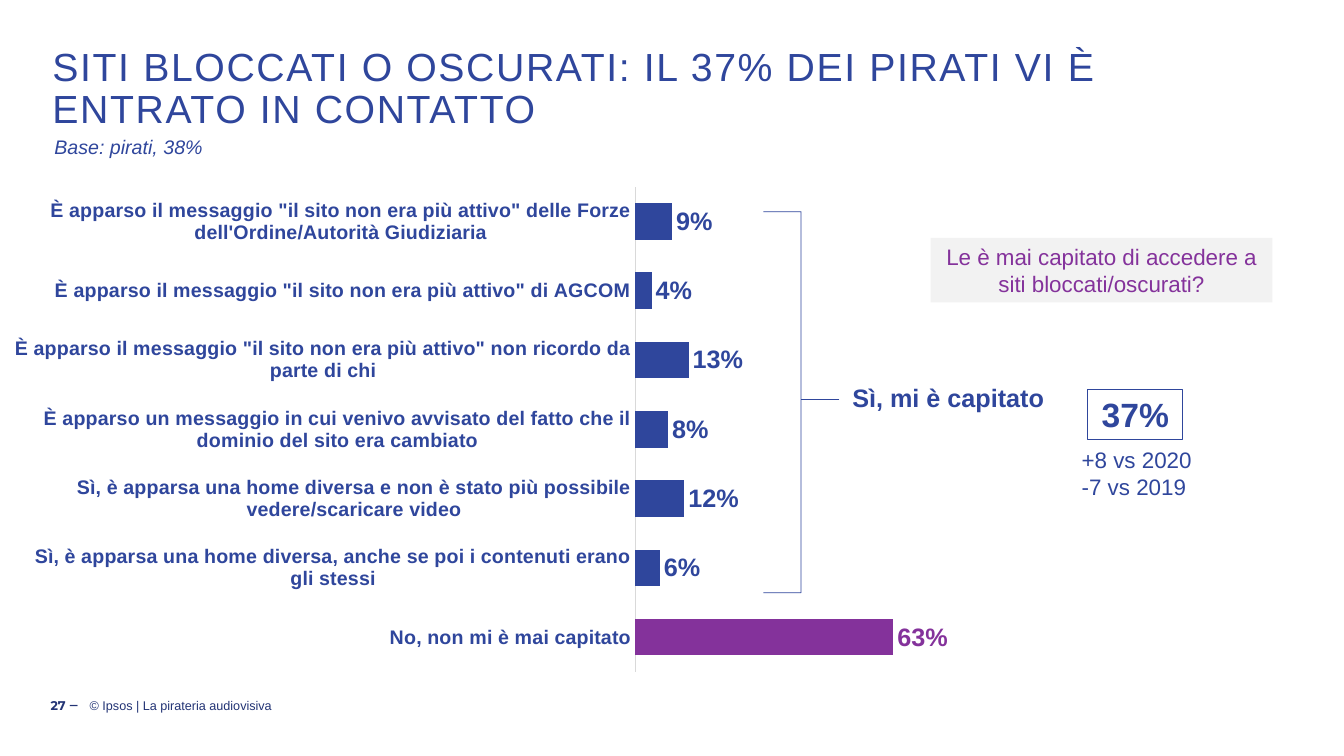
import lxml.etree
import pptx
import pptx.chart.data
import pptx.dml.color
import pptx.enum.chart
import pptx.enum.shapes
import pptx.enum.text
import pptx.oxml
import pptx.oxml.ns
import pptx.util

PX = 9144  # 100 px to the inch
BLUE = pptx.dml.color.RGBColor(0x2F, 0x46, 0x9C)
NAVY = pptx.dml.color.RGBColor(0x23, 0x34, 0x75)
PURPLE = pptx.dml.color.RGBColor(0x84, 0x32, 0x9B)
PALE = pptx.dml.color.RGBColor(0xF2, 0xF2, 0xF2)
GREY = pptx.dml.color.RGBColor(0xD9, 0xD9, 0xD9)

ALIGN = pptx.enum.text.PP_ALIGN
ANCHOR = pptx.enum.text.MSO_ANCHOR
SHAPE = pptx.enum.shapes.MSO_SHAPE

ANSWERS = [
    ("È apparso il messaggio \"il sito non era più attivo\" delle Forze dell'Ordine/Autorità Giudiziaria", 0.09),
    ("È apparso il messaggio \"il sito non era più attivo\" di AGCOM", 0.04),
    ("È apparso il messaggio \"il sito non era più attivo\" non ricordo da parte di chi", 0.13),
    ("È apparso un messaggio in cui venivo avvisato del fatto che il dominio del sito era cambiato", 0.08),
    ("Sì, è apparsa una home diversa e non è stato più possibile vedere/scaricare video", 0.12),
    ("Sì, è apparsa una home diversa, anche se poi i contenuti erano gli stessi", 0.06),
    ("No, non mi è mai capitato", 0.63),
]
PLOT_AREA = {"x": 0.594, "y": 0.03, "w": 0.391, "h": 0.94}


def px(*lengths):
    return [pptx.util.Emu(length * PX) for length in lengths]


def style_font(font, size, color, bold=False, italic=False, name="Arial"):
    font.name, font.size = name, pptx.util.Pt(size)
    font.bold, font.italic = bold, italic
    font.color.rgb = color


def fill_text(shape, text, size, color, align=ALIGN.LEFT, anchor=ANCHOR.TOP, inset=10, **style):
    frame = shape.text_frame
    frame.text = text
    frame.word_wrap = True
    frame.vertical_anchor = anchor
    frame.margin_left, frame.margin_right = px(inset, inset)
    frame.margin_top, frame.margin_bottom = px(5, 5)
    for para in frame.paragraphs:
        para.alignment = align
        for span in para.runs:
            style_font(span.font, size, color, **style)


def add_text(page, bounds, text, size, color, **style):
    box = page.shapes.add_textbox(*px(*bounds))
    fill_text(box, text, size, color, **style)


def add_shape(page, kind, bounds, fill=None, line=None, width=0.75):
    shape = page.shapes.add_shape(kind, *px(*bounds))
    shape.shadow.inherit = False
    if fill is None:
        shape.fill.background()
    else:
        shape.fill.solid()
        shape.fill.fore_color.rgb = fill
    if line is None:
        shape.line.fill.background()
    else:
        shape.line.color.rgb = line
        shape.line.width = pptx.util.Pt(width)
    return shape


def set_title(page, text):
    title = page.shapes.title
    title.left, title.top, title.width, title.height = px(44, 42, 1245, 95)
    fill_text(title, text, 28, BLUE, inset=8)
    para = title.text_frame.paragraphs[0]
    para.line_spacing = 0.9
    para.runs[0].font._element.set("spc", "120")


def place_plot(chart):
    """Fix the inner plot area as fractions of the chart."""
    plot_area = chart._chartSpace.chart.plotArea
    for old in plot_area.findall(pptx.oxml.ns.qn("c:layout")):
        plot_area.remove(old)
    layout = lxml.etree.Element(pptx.oxml.ns.qn("c:layout"))
    manual = lxml.etree.SubElement(layout, pptx.oxml.ns.qn("c:manualLayout"))
    settings = [("layoutTarget", "inner"), ("xMode", "edge"), ("yMode", "edge"), *PLOT_AREA.items()]
    for tag, value in settings:
        lxml.etree.SubElement(manual, pptx.oxml.ns.qn("c:" + tag)).set("val", str(value))
    plot_area.insert(0, layout)


def format_axes(chart):
    tick = pptx.enum.chart.XL_TICK_MARK
    categories = chart.category_axis
    categories.reverse_order = True
    categories.major_tick_mark = categories.minor_tick_mark = tick.NONE
    categories.format.line.color.rgb = GREY
    categories.format.line.width = pptx.util.Pt(0.75)
    style_font(categories.tick_labels.font, 14, BLUE, bold=True)
    values = chart.value_axis
    values.minimum_scale, values.maximum_scale, values.major_unit = 0, 1, 0.1
    values.has_major_gridlines = False
    values.visible = False


def add_answer_chart(page, bounds):
    data = pptx.chart.data.CategoryChartData(number_format="0%")
    data.categories = [answer for answer, share in ANSWERS]
    data.add_series("Series 1", [share for answer, share in ANSWERS])
    kind = pptx.enum.chart.XL_CHART_TYPE.BAR_CLUSTERED
    chart = page.shapes.add_chart(kind, *px(*bounds), data).chart
    chart.has_legend = chart.has_title = False
    chart.font.name, chart.font.size = "Arial", pptx.util.Pt(10)
    format_axes(chart)
    place_plot(chart)

    plot = chart.plots[0]
    plot.gap_width, plot.overlap, plot.vary_by_categories = 90, -10, False
    series = plot.series[0]
    series.invert_if_negative = False
    never = series.points[len(ANSWERS) - 1]
    for bar, color in ((series, BLUE), (never, PURPLE)):
        bar.format.fill.solid()
        bar.format.fill.fore_color.rgb = color

    labels = series.data_labels
    labels.show_value = True
    labels.number_format, labels.number_format_is_linked = "0%", False
    for label, color in ((labels, BLUE), (never.data_label, PURPLE)):
        style_font(label.font, 18, color, bold=True)
        label.position = pptx.enum.chart.XL_LABEL_POSITION.OUTSIDE_END


def main():
    deck = pptx.Presentation()
    deck.slide_width, deck.slide_height = px(1333, 750)
    page = deck.slides.add_slide(deck.slide_layouts[5])

    set_title(page, "SITI BLOCCATI O OSCURATI: IL 37% DEI PIRATI VI È ENTRATO IN CONTATTO")
    add_text(page, (44, 129, 319, 34), "Base: pirati, 38%", 14, BLUE, italic=True)
    add_answer_chart(page, (13, 170, 1039, 512))

    question = add_shape(page, SHAPE.RECTANGLE, (923, 236, 339, 64), fill=PALE)
    fill_text(question, "Le è mai capitato di accedere a siti bloccati/oscurati?", 16, PURPLE,
              align=ALIGN.CENTER, anchor=ANCHOR.MIDDLE)

    brace = add_shape(page, SHAPE.RIGHT_BRACE, (757, 210, 75, 378), line=BLUE, width=0.5)
    brace.adjustments[0], brace.adjustments[1] = 0, 0.493
    add_text(page, (824, 374, 233, 40), "Sì, mi è capitato", 18, BLUE, align=ALIGN.CENTER, bold=True)

    total = add_shape(page, SHAPE.RECTANGLE, (1079, 386, 94, 50), line=BLUE)
    fill_text(total, "37%", 24, BLUE, align=ALIGN.CENTER, anchor=ANCHOR.MIDDLE, bold=True)
    add_text(page, (1063, 438, 151, 64), "+8 vs 2020\n-7 vs 2019", 16, BLUE)

    add_text(page, (42, 680, 39, 40), "27 ‒ ", 9, NAVY, align=ALIGN.RIGHT,
             anchor=ANCHOR.MIDDLE, inset=0, bold=True, name="Montserrat")
    add_text(page, (89, 680, 1143, 40), "© Ipsos | La pirateria audiovisiva", 9, NAVY,
             anchor=ANCHOR.MIDDLE, inset=0)

    deck.save("out.pptx")


if __name__ == "__main__":
    main()
